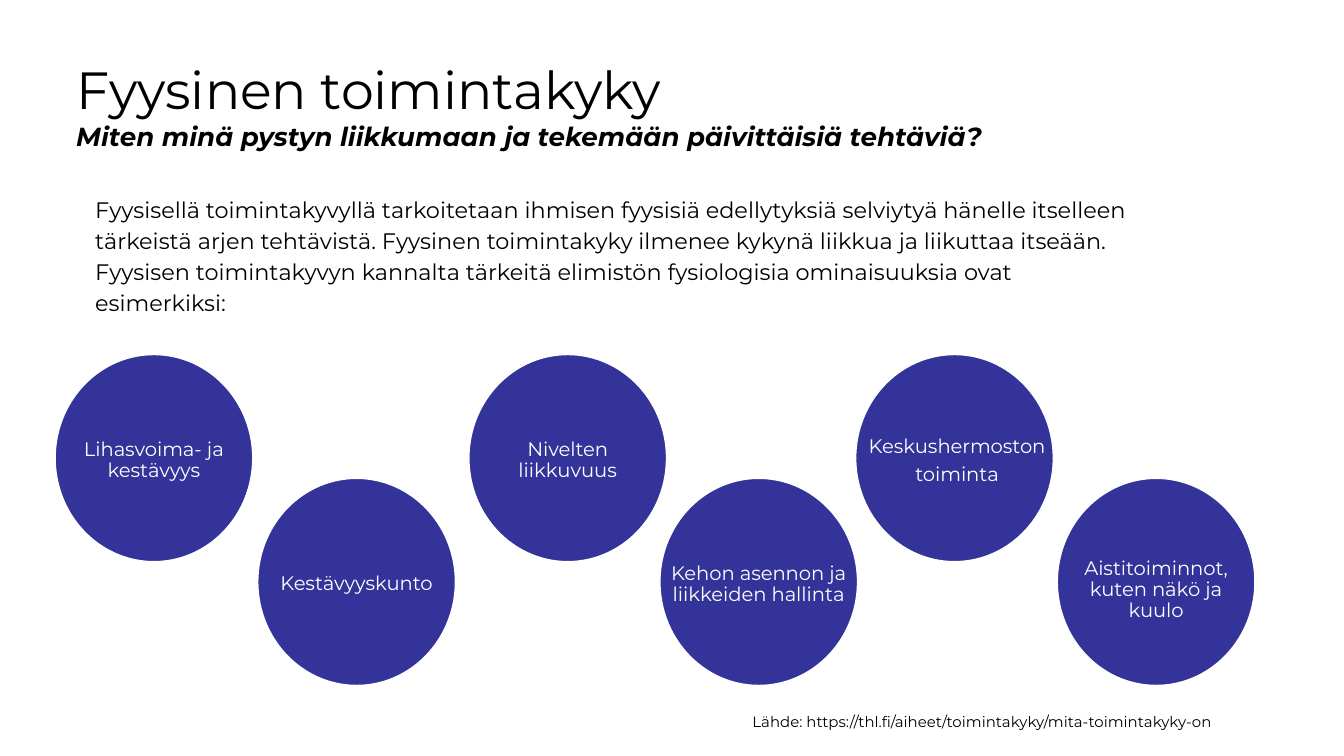
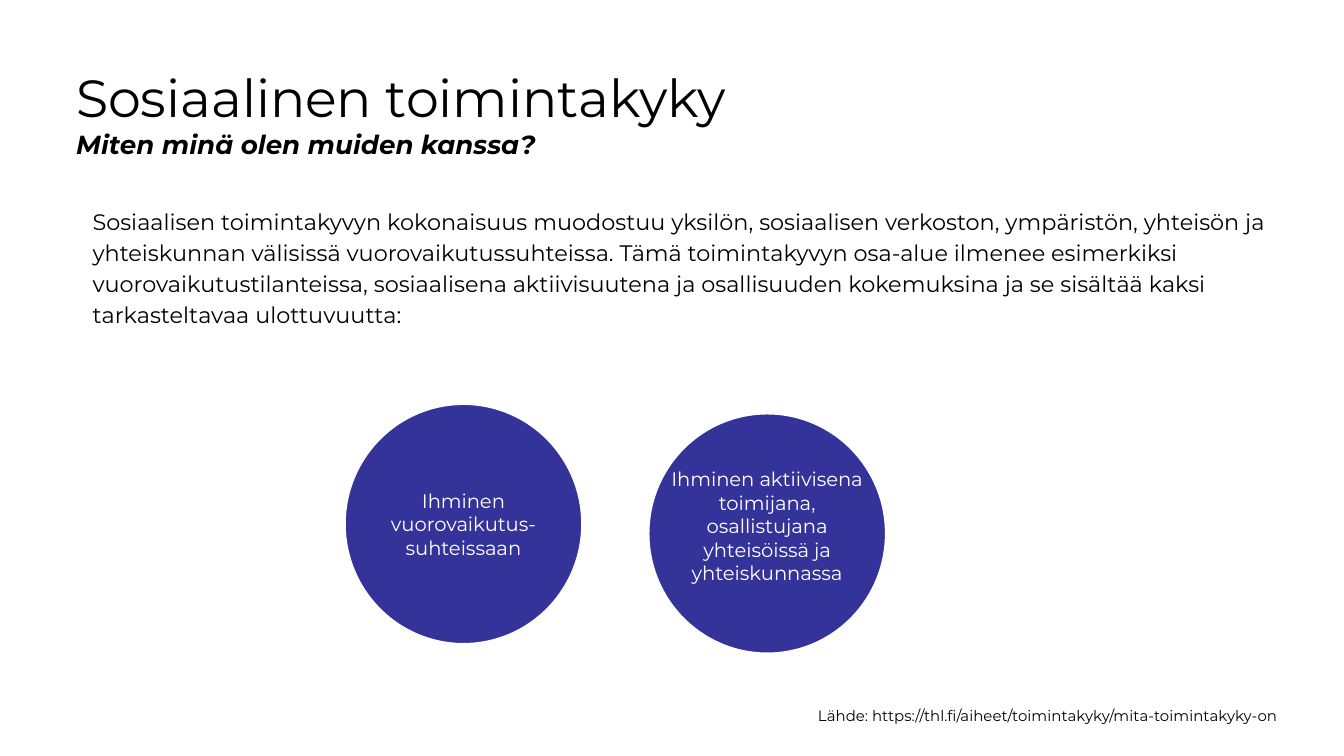
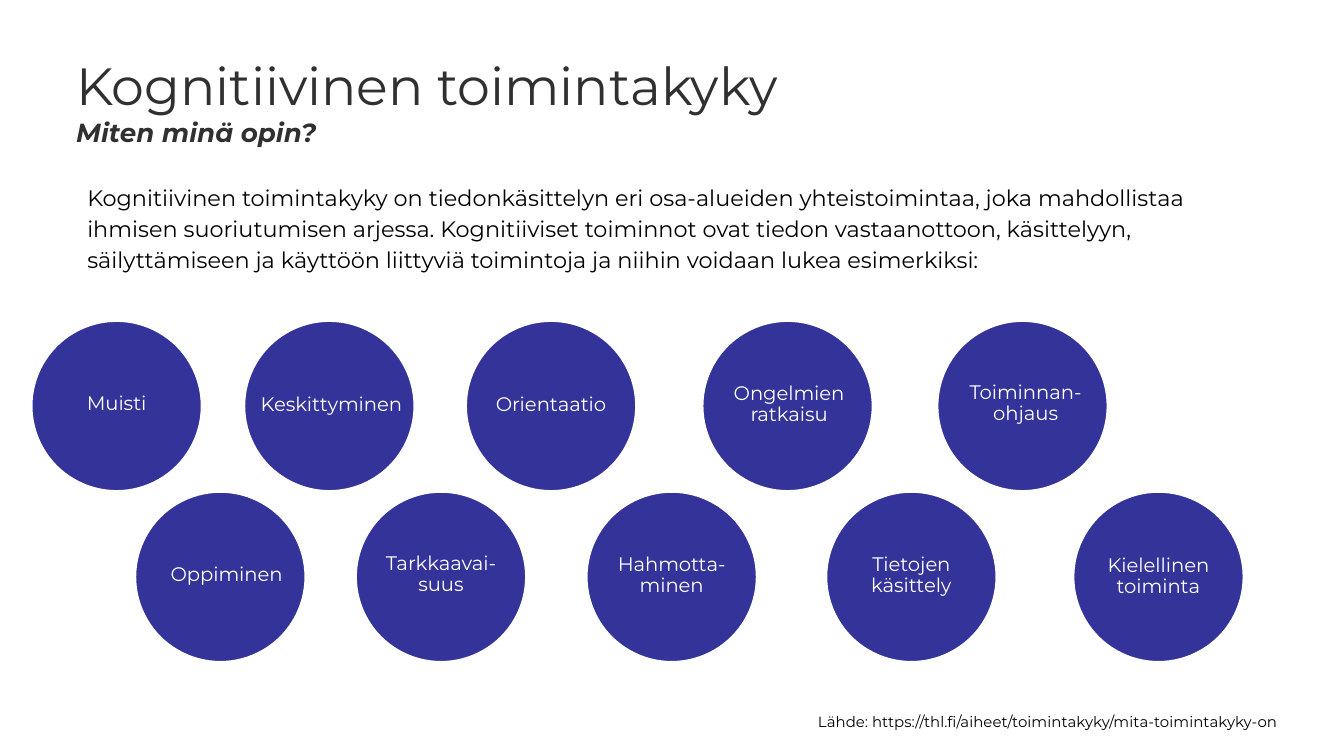
"""Build three slides on physical, social and cognitive functional capacity."""
from itertools import cycle

from pptx import Presentation
from pptx.dml.color import RGBColor
from pptx.enum.shapes import MSO_SHAPE
from pptx.enum.text import MSO_ANCHOR, PP_ALIGN
from pptx.util import Cm, Pt

OVAL = MSO_SHAPE.OVAL
TOP, MIDDLE = MSO_ANCHOR.TOP, MSO_ANCHOR.MIDDLE
CENTER = PP_ALIGN.CENTER

BLACK = RGBColor(0x00, 0x00, 0x00)
CHARCOAL = RGBColor(0x30, 0x30, 0x30)
WHITE = RGBColor(0xFF, 0xFF, 0xFF)
INDIGO = RGBColor(0x33, 0x33, 0x99)

FONT = "Montserrat"
TITLE_FONT = {"name": FONT, "size": Pt(28)}
QUESTION_FONT = {"name": FONT, "size": Pt(14), "bold": True, "italic": True}
BODY_FONT = {"name": FONT, "size": Pt(12)}
LABEL_FONT = {"name": FONT, "size": Pt(10.5)}
SOURCE_FONT = {"name": FONT, "size": Pt(8)}
SOURCE = "Lähde: https://thl.fi/aiheet/toimintakyky/mita-toimintakyky-on"

SLIDES = [
    {
        "title": "Fyysinen toimintakyky",
        "question": "Miten minä pystyn liikkumaan ja tekemään päivittäisiä tehtäviä?",
        "title_top": 0.84,
        "color": BLACK,
        "body": "Fyysisellä toimintakyvyllä tarkoitetaan ihmisen fyysisiä edellytyksiä "
                "selviytyä hänelle itselleen tärkeistä arjen tehtävistä. Fyysinen "
                "toimintakyky ilmenee kykynä liikkua ja liikuttaa itseään. Fyysisen "
                "toimintakyvyn kannalta tärkeitä elimistön fysiologisia ominaisuuksia "
                "ovat esimerkiksi:",
        "body_box": (1.24, 3.38, 20.6, 2.67),
        "circle": (3.78, 3.96),
        "label": (3.5, 2.79),
        "tops": (6.68, 9.02),
        "paragraph": {"line_spacing": 0.9},
        "gap": Pt(3.7),
        "circles": [
            (1.02, 0, 0.05, "Lihasvoima- ja kestävyys"),
            (4.85, 0, 0.05, "Kestävyyskunto"),
            (8.84, 0, 0.05, "Nivelten liikkuvuus"),
            (12.45, 0, 0.05, "Kehon asennon ja liikkeiden hallinta"),
            (16.15, 0.05, 0.05, "Keskushermoston\ntoiminta"),
            (19.96, 0, 0.15, "Aistitoiminnot, kuten näkö ja kuulo"),
        ],
        "source": (13.97, 13.34),
    },
    {
        "title": "Sosiaalinen toimintakyky",
        "question": "Miten minä olen muiden kanssa?",
        "title_top": 0.99,
        "color": BLACK,
        "body": "Sosiaalisen toimintakyvyn kokonaisuus muodostuu yksilön, sosiaalisen "
                "verkoston, ympäristön, yhteisön ja yhteiskunnan välisissä "
                "vuorovaikutussuhteissa. Tämä toimintakyvyn osa-alue ilmenee esimerkiksi "
                "vuorovaikutustilanteissa, sosiaalisena aktiivisuutena ja osallisuuden "
                "kokemuksina ja se sisältää kaksi tarkasteltavaa ulottuvuutta:",
        "body_box": (1.19, 3.61, 23.01, 2.9),
        "circle": (4.52, 4.57),
        "label": (4.22, 3.23),
        "tops": (7.62, 7.8),
        "paragraph": {"line_spacing": 1.0},
        "gap": Pt(0),
        "circles": [
            (6.5, 0, 0, "Ihminen\nvuorovaikutus-suhteissaan"),
            (12.24, 0, -0.14, "Ihminen aktiivisena toimijana, osallistujana "
                              "yhteisöissä ja yhteiskunnassa"),
        ],
        "source": (15.21, 13.23),
    },
    {
        "title": "Kognitiivinen toimintakyky",
        "question": "Miten minä opin?",
        "title_top": 0.76,
        "color": CHARCOAL,
        "body": "Kognitiivinen toimintakyky on tiedonkäsittelyn eri osa-alueiden "
                "yhteistoimintaa, joka mahdollistaa ihmisen suoriutumisen arjessa. "
                "Kognitiiviset toiminnot ovat tiedon vastaanottoon, käsittelyyn, "
                "säilyttämiseen ja käyttöön liittyviä toimintoja ja niihin voidaan "
                "lukea esimerkiksi:",
        "body_box": (1.09, 3.15, 23.01, 2.9),
        "circle": (3.25, 3.25),
        "label": (2.8, 2.31),
        "tops": (6.05, 9.28),
        "paragraph": {"line_spacing": 0.9},
        "gap": Pt(3.7),
        "circles": [
            (0.58, 0, -0.04, "Muisti"),
            (2.54, 0.12, -0.04, "Oppiminen"),
            (4.6, 0.04, -0.02, "Keskittyminen"),
            (6.71, 0, -0.04, "Tarkkaavai-suus"),
            (8.79, 0, -0.02, "Orientaatio"),
            (11.07, 0, -0.02, "Hahmotta-minen"),
            (13.26, 0.03, -0.02, "Ongelmien ratkaisu"),
            (15.6, 0, -0.02, "Tietojen käsittely"),
            (17.7, 0.06, -0.04, "Toiminnan-ohjaus"),
            (20.27, 0, 0, "Kielellinen toiminta"),
        ],
        "source": (15.21, 13.34),
    },
]


def apply(target, values):
    """Set each named attribute on the target."""
    for name, value in values.items():
        setattr(target, name, value)


def add_box(s, left, top, width, height, inset, anchor=TOP):
    """Add a wrapping text box and return its text frame."""
    tf = s.shapes.add_textbox(Cm(left), Cm(top), Cm(width), Cm(height)).text_frame
    sides = ("margin_left", "margin_top", "margin_right", "margin_bottom")
    apply(tf, {"word_wrap": True, "vertical_anchor": anchor})
    apply(tf, dict.fromkeys(sides, Cm(inset)))
    return tf


def add_run(p, text, font, color):
    """Append a formatted run to a paragraph."""
    r = p.add_run()
    r.text = text
    apply(r.font, font)
    r.font.color.rgb = color


def add_title(s, title, question, top, color):
    """Add the heading with its question on the next line."""
    p = add_box(s, 1.19, top, 23.01, 1.6, 0.25).paragraphs[0]
    add_run(p, title, TITLE_FONT, color)
    p.add_line_break()
    add_run(p, question, QUESTION_FONT, color)


def add_body(s, text, box):
    """Add the indented introduction."""
    tf = add_box(s, *box, 0.25)
    tf.margin_left = Cm(0.56)
    p = tf.paragraphs[0]
    p.line_spacing = 1.15
    add_run(p, text, BODY_FONT, BLACK)


def add_circle(s, left, top, width, height):
    """Add one filled circle with a white outline."""
    sp = s.shapes.add_shape(OVAL, Cm(left), Cm(top), Cm(width), Cm(height))
    sp.shadow.inherit = False
    sp.fill.solid()
    sp.fill.fore_color.rgb = INDIGO
    sp.line.color.rgb = WHITE
    sp.line.width = Pt(2)


def add_label(s, center_x, center_y, size, text, paragraph, gap):
    """Add a label centred on the given point."""
    width, height = size
    tf = add_box(s, center_x - width / 2, center_y - height / 2, width, height, 0.03, MIDDLE)
    for i, line in enumerate(text.split("\n")):
        p = tf.add_paragraph() if i else tf.paragraphs[0]
        apply(p, {"alignment": CENTER, "space_before": gap if i else Pt(0), **paragraph})
        add_run(p, line, LABEL_FONT, WHITE)


def add_circles(s, data):
    """Add the labelled circles, alternating between two heights."""
    width, height = data["circle"]
    for (left, dx, dy, text), top in zip(data["circles"], cycle(data["tops"])):
        add_circle(s, left, top, width, height)
        add_label(s, left + width / 2 + dx, top + height / 2 + dy, data["label"], text,
                  data["paragraph"], data["gap"])


def add_source(s, left, top):
    """Add the source line at the foot of the slide."""
    tf = add_box(s, left, top, 9.5, 0.94, 0.13)
    tf.margin_left = Cm(0.25)
    add_run(tf.paragraphs[0], SOURCE, SOURCE_FONT, BLACK)


def main():
    """Build and save the presentation."""
    prs = Presentation()
    prs.slide_width, prs.slide_height = Cm(25.4), Cm(14.29)
    for data in SLIDES:
        s = prs.slides.add_slide(prs.slide_layouts[6])
        add_title(s, data["title"], data["question"], data["title_top"], data["color"])
        add_body(s, data["body"], data["body_box"])
        add_circles(s, data)
        add_source(s, *data["source"])
    prs.save("out.pptx")


if __name__ == "__main__":
    main()
